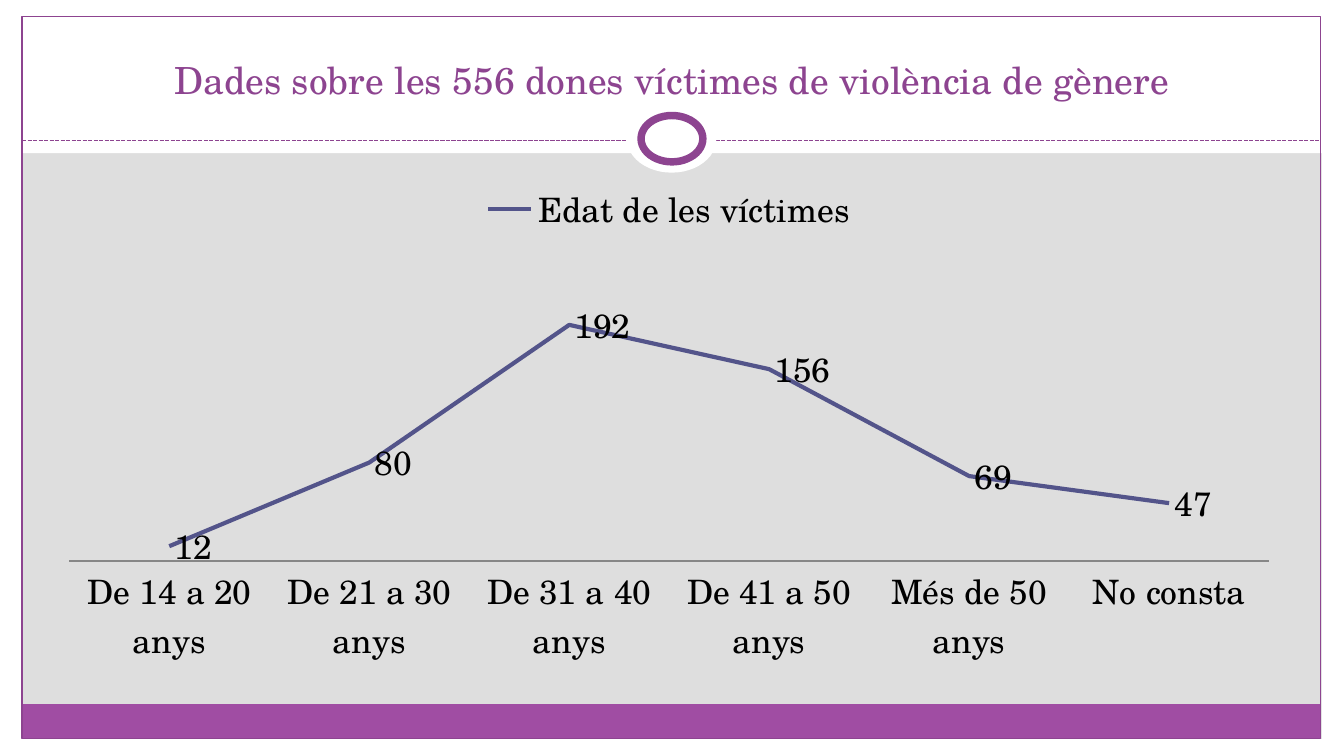
from lxml import etree
from pptx import Presentation
from pptx.chart.data import CategoryChartData
from pptx.dml.color import RGBColor
from pptx.enum.chart import (XL_CHART_TYPE, XL_LABEL_POSITION, XL_LEGEND_POSITION,
                             XL_MARKER_STYLE, XL_TICK_MARK)
from pptx.enum.dml import MSO_LINE
from pptx.enum.shapes import MSO_CONNECTOR, MSO_SHAPE
from pptx.enum.text import MSO_ANCHOR, PP_ALIGN
from pptx.oxml.ns import qn
from pptx.util import Pt

PX = 4572  # 200 px to the inch
WIDTH, HEIGHT = 2000, 1125
FONT = "TeX Gyre Schola"
WHITE = RGBColor(0xFF, 0xFF, 0xFF)
BLACK = RGBColor(0x00, 0x00, 0x00)
GREY = RGBColor(0xDE, 0xDE, 0xDE)
AXIS_GREY = RGBColor(0x87, 0x87, 0x87)
PURPLE = RGBColor(0xA0, 0x4D, 0xA3)
DARK_PURPLE = RGBColor(0x8D, 0x44, 0x90)
INDIGO = RGBColor(0x53, 0x54, 0x8A)


class SlideBuilder:
    """Holds the style and the current slide."""

    def __init__(self, slide, font=FONT):
        self.slide = slide
        self.font = font

    def emu(self, *lengths):
        return [length * PX for length in lengths]

    def background(self, color):
        fill = self.slide.background.fill
        fill.solid()
        fill.fore_color.rgb = color

    def shape(self, kind, place, fill=None, line=None, width=0.75):
        shape = self.slide.shapes.add_shape(kind, *self.emu(*place))
        shape.shadow.inherit = False
        if fill is None:
            shape.fill.background()
        else:
            shape.fill.solid()
            shape.fill.fore_color.rgb = fill
        if line is None:
            shape.line.fill.background()
        else:
            shape.line.color.rgb = line
            shape.line.width = Pt(width)

    def dashed_line(self, start, end, color):
        line = self.slide.shapes.add_connector(
            MSO_CONNECTOR.STRAIGHT, *self.emu(*start, *end))
        line.line.color.rgb = color
        line.line.width = Pt(0.75)
        line.line.dash_style = MSO_LINE.SQUARE_DOT
        etree.SubElement(line._element.spPr, qn("a:effectLst"))

    def title(self, place, text, size, color):
        box = self.slide.shapes.add_textbox(*self.emu(*place))
        frame = box.text_frame
        frame.word_wrap = True
        frame.vertical_anchor = MSO_ANCHOR.BOTTOM
        frame.text = text
        para = frame.paragraphs[0]
        para.alignment = PP_ALIGN.CENTER
        font = para.runs[0].font
        font.name, font.size, font.color.rgb = self.font, Pt(size), color

    def line_chart(self, place, name, points, size, color, top, plot):
        data = CategoryChartData()
        data.categories = list(points)
        data.add_series(name, list(points.values()))
        chart = self.slide.shapes.add_chart(
            XL_CHART_TYPE.LINE, *self.emu(*place), data).chart
        chart.font.name, chart.font.size = self.font, Pt(size)
        chart.font.color.rgb = BLACK
        chart.has_title = False
        chart.has_legend = True
        chart.legend.position = XL_LEGEND_POSITION.TOP
        chart.legend.include_in_layout = False

        # Axes
        values = chart.value_axis
        values.visible = False
        values.has_major_gridlines = False
        values.minimum_scale, values.maximum_scale = 0, top
        categories = chart.category_axis
        categories.major_tick_mark = XL_TICK_MARK.NONE
        categories.format.line.color.rgb = AXIS_GREY
        categories.format.line.width = Pt(0.75)

        # Series and labels
        chart.plots[0].vary_by_categories = False
        series = chart.plots[0].series[0]
        series.smooth = False
        series.marker.style = XL_MARKER_STYLE.NONE
        series.format.line.color.rgb = color
        series.format.line.width = Pt(2.25)
        labels = series.data_labels
        labels.show_value = True
        labels.position = XL_LABEL_POSITION.RIGHT

        # Plot area as fractions of the chart
        area = chart._chartSpace.find(".//" + qn("c:plotArea"))
        for old in area.findall(qn("c:layout")):
            area.remove(old)
        layout = etree.Element(qn("c:layout"))
        manual = etree.SubElement(layout, qn("c:manualLayout"))
        settings = dict(layoutTarget="inner", xMode="edge", yMode="edge",
                        **dict(zip("xywh", plot)))
        for tag, value in settings.items():
            etree.SubElement(manual, qn("c:" + tag), val=str(value))
        area.insert(0, layout)


def main():
    deck = Presentation()
    deck.slide_width, deck.slide_height = WIDTH * PX, HEIGHT * PX
    page = SlideBuilder(deck.slides.add_slide(deck.slide_layouts[6]))
    page.background(GREY)

    # White margins: bottom, top, left, right
    for margin in ((0, 1100, WIDTH, 25), (0, 0, WIDTH, 228),
                   (0, 0, 33, HEIGHT), (1967, 0, 33, HEIGHT)):
        page.shape(MSO_SHAPE.RECTANGLE, margin, WHITE)

    # Footer band, frame and divider
    page.shape(MSO_SHAPE.RECTANGLE, (33, 1048, 1932, 51), PURPLE)
    page.shape(MSO_SHAPE.RECTANGLE, (33, 25, 1932, 1074), line=DARK_PURPLE)
    page.dashed_line((33, 209), (1965, 209), DARK_PURPLE)

    # Ring on the divider
    page.shape(MSO_SHAPE.OVAL, (933, 157, 133, 100), WHITE)
    page.shape(MSO_SHAPE.OVAL, (954, 172, 92, 69), WHITE, DARK_PURPLE, 4)

    page.title((67, 38, 1866, 124),
               "Dades sobre les 556 dones víctimes de violència de gènere",
               20, DARK_PURPLE)

    # Victims by age
    ages = {"De 14 a 20 anys": 12, "De 21 a 30 anys": 80,
            "De 31 a 40 anys": 192, "De 41 a 50 anys": 156,
            "Més de 50 anys": 69, "No consta": 47}
    page.line_chart((66, 250, 1860, 750), "Edat de les víctimes", ages, 18,
                    INDIGO, top=250, plot=(0.02, 0.17, 0.96, 0.61))

    deck.save("out.pptx")


if __name__ == "__main__":
    main()
